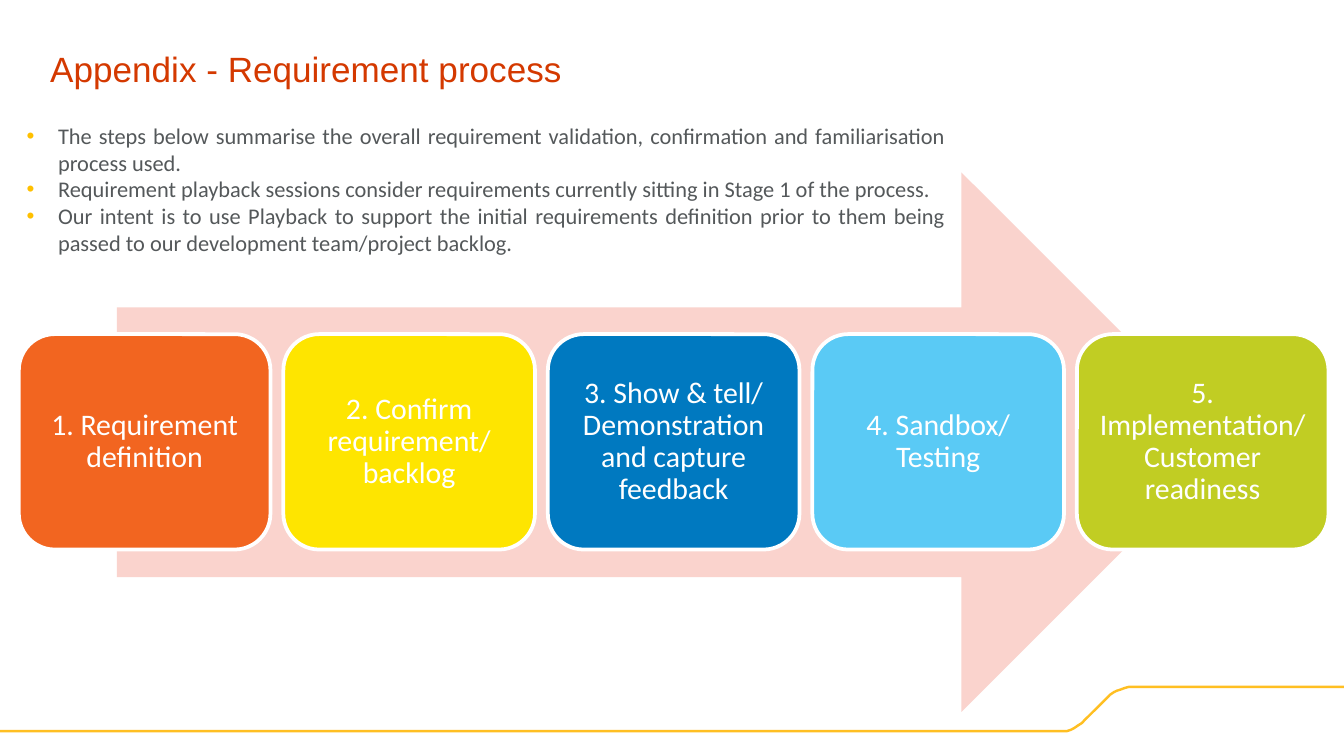
"""Builds the requirement process slide: five steps along an arrow."""
from dataclasses import dataclass

from lxml import etree
from pptx import Presentation
from pptx.dml.color import RGBColor
from pptx.enum.shapes import MSO_SHAPE
from pptx.enum.text import MSO_ANCHOR, MSO_AUTO_SIZE, PP_ALIGN
from pptx.oxml.ns import qn
from pptx.util import Pt

ARROW, ROUND = MSO_SHAPE.RIGHT_ARROW, MSO_SHAPE.ROUNDED_RECTANGLE
TOP, MIDDLE = MSO_ANCHOR.TOP, MSO_ANCHOR.MIDDLE
LEFT, CENTER, JUSTIFY = PP_ALIGN.LEFT, PP_ALIGN.CENTER, PP_ALIGN.JUSTIFY
FIXED = MSO_AUTO_SIZE.NONE


@dataclass
class Theme:
    title: str = "D43900"
    body: str = "54585A"
    bullet: str = "FFC000"
    rule: str = "FFBF22"
    arrow: str = "FAD3CD"
    white: str = "FFFFFF"
    head_font: str = "Arial"
    font: str = "Calibri"
    title_size: float = 18.8
    body_size: float = 12
    step_size: float = 16


theme = Theme()


def place(shape, left, top, width, height):
    shape.left, shape.top = Pt(left), Pt(top)
    shape.width, shape.height = Pt(width), Pt(height)


def style(frame, name, size, color, align, anchor, side, edge):
    frame.word_wrap, frame.auto_size = True, FIXED
    frame.vertical_anchor = anchor
    frame.margin_left = frame.margin_right = Pt(side)
    frame.margin_top = frame.margin_bottom = Pt(edge)
    for para in frame.paragraphs:
        para.alignment = align
        para.space_before = Pt(0)
        for run in para.runs:
            run.font.name, run.font.size = name, Pt(size)
            run.font.color.rgb = RGBColor.from_string(color)


deck = Presentation()
deck.slide_width, deck.slide_height = Pt(720), Pt(405)
slide = deck.slides.add_slide(deck.slide_layouts[1])
shapes = slide.shapes

title = shapes.title
place(title, 19.7, 20, 680, 33)
title.text_frame.text = "Appendix - Requirement process"
style(title.text_frame, theme.head_font, theme.title_size, theme.title,
      LEFT, MIDDLE, 7.2, 3.6)

notes = [
    "The steps below summarise the overall requirement validation, "
    "confirmation and familiarisation process used.",
    "Requirement playback sessions consider requirements currently "
    "sitting in Stage 1 of the process.",
    "Our intent is to use Playback to support the initial requirements "
    "definition prior to them being passed to our development "
    "team/project backlog.",
]
body = slide.placeholders[1]
place(body, 9.3, 62.6, 502.5, 78.5)
body.text_frame.text = "\n".join(notes)
for para in body.text_frame.paragraphs:
    props = para._p.get_or_add_pPr()
    props.set("marL", str(Pt(16.8)))
    props.set("indent", str(Pt(-16.8)))
    tint = etree.SubElement(props, qn("a:buClr"))
    etree.SubElement(tint, qn("a:srgbClr"), val=theme.bullet)
    etree.SubElement(props, qn("a:buFont"), typeface=theme.head_font)
    etree.SubElement(props, qn("a:buChar"), char="•")
style(body.text_frame, theme.font, theme.body_size, theme.body,
      JUSTIFY, TOP, 5, 2.7)

points = [
    (722, 368), (607, 368), (604.8, 368), (602.6, 368.6), (600.5, 369.4),
    (598.3, 370.1), (596.9, 370.8), (594.7, 372.2), (593.3, 373.7),
    (581, 385.9), (579.6, 387.4), (577.4, 388.8), (575.3, 390.2),
    (573.8, 391), (571.7, 391.7), (569.5, 391.7), (-1.4, 391.7),
]
dots = [(Pt(x), Pt(y)) for x, y in points]
path = shapes.build_freeform(*dots[0])
path.add_line_segments(dots[1:], close=False)
rule = path.convert_to_shape()
rule.shadow.inherit = False
rule.fill.background()
rule.line.color.rgb = RGBColor.from_string(theme.rule)
rule.line.width = Pt(1.29)

arrow = shapes.add_shape(ARROW, Pt(62.6), Pt(92.4), Pt(597), Pt(289))
arrow.shadow.inherit = False
arrow.fill.solid()
arrow.fill.fore_color.rgb = RGBColor.from_string(theme.arrow)
arrow.line.fill.background()

steps = [
    ("1. Requirement definition", "F26520"),
    ("2. Confirm requirement/ backlog", "FEE500"),
    ("3. Show & tell/ Demonstration and capture feedback", "0079C0"),
    ("4. Sandbox/ Testing", "5ACAF5"),
    ("5. Implementation/ Customer readiness", "C1CD23"),
]
for i, (text, color) in enumerate(steps):
    step = shapes.add_shape(ROUND, Pt(10.1 + 141.7 * i), Pt(179),
                            Pt(134.8), Pt(115.4))
    step.shadow.inherit = False
    step.fill.solid()
    step.fill.fore_color.rgb = RGBColor.from_string(color)
    step.line.color.rgb = RGBColor.from_string(theme.white)
    step.line.width = Pt(2)
    step.text_frame.text = text
    step.text_frame.paragraphs[0].line_spacing = 0.9
    style(step.text_frame, theme.font, theme.step_size, theme.white,
          CENTER, MIDDLE, 4.8, 4.8)

deck.save("out.pptx")
